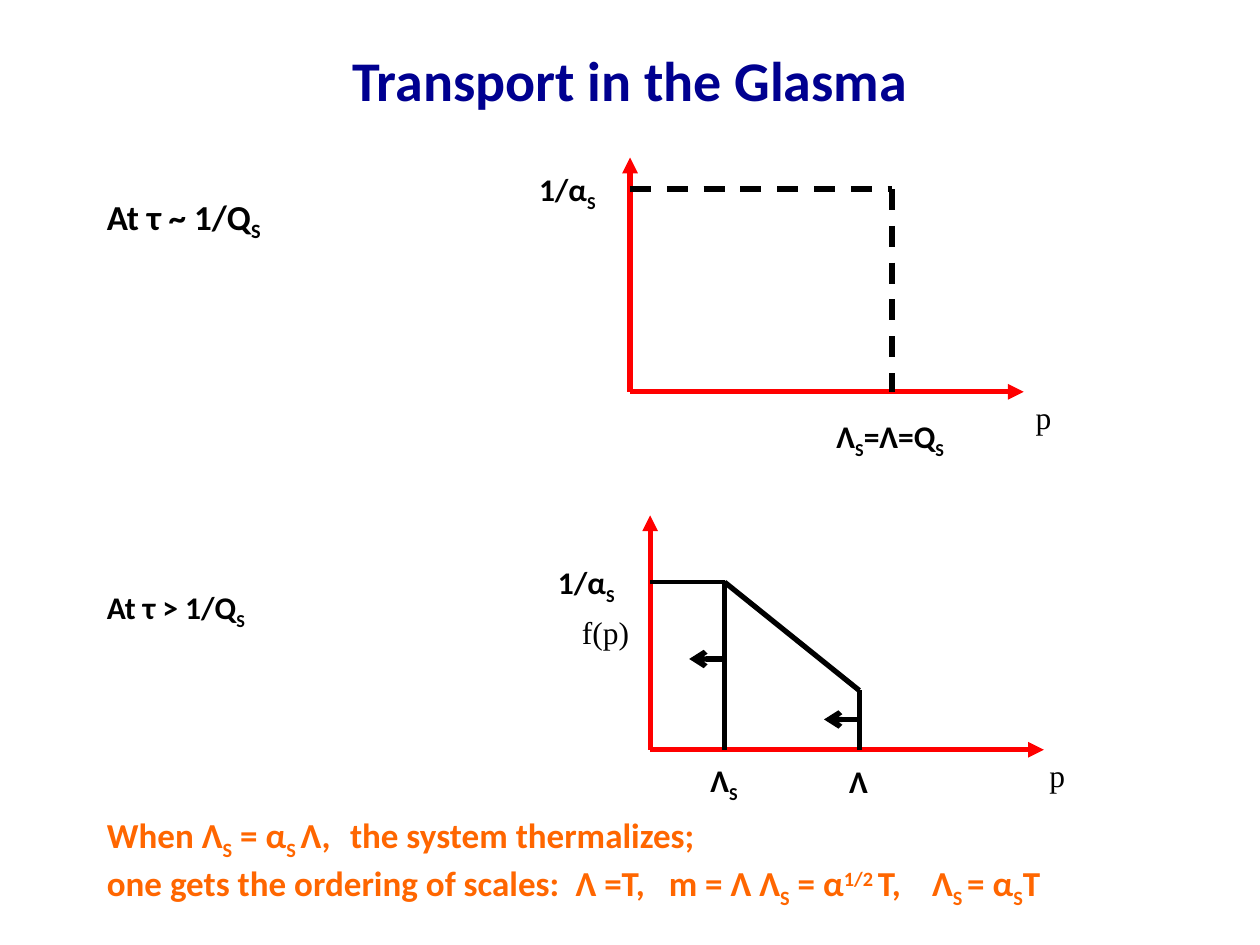
from lxml import etree
from pptx import Presentation
from pptx.dml import color
from pptx.enum import dml, shapes, text
from pptx.oxml import ns
from pptx.util import Emu, Inches, Pt

NAVY, BLACK, RED, ORANGE = "000090", "000000", "FF0000", "FF6600"
BASELINES = {"_": "-25000", "^": "30000"}


def rgb(code):
    """Return the colour of a hex string."""
    return color.RGBColor.from_string(code)


def child(parent, tag, **attributes):
    """Add a DrawingML element to its parent."""
    return etree.SubElement(parent, ns.qn(f"a:{tag}"), **attributes)


def write(paragraph, content, size=18, ink=BLACK, font="Calibri", bold=True):
    """Add runs split at bars; a part led by _ or ^ is lowered or raised."""
    for part in content.split("|"):
        run = paragraph.add_run()
        baseline = BASELINES.get(part[0])
        run.text = part[1:] if baseline else part
        run.font.size, run.font.bold, run.font.name = Pt(size), bold, font
        run.font.color.rgb = rgb(ink)
        if baseline:
            run.font._element.set("baseline", baseline)


class Board:
    """Style and current slide, measured on a grid of 100 columns by 75 rows."""

    def __init__(self, deck):
        """Add a blank slide and work out the grid cell."""
        self.slide = deck.slides.add_slide(deck.slide_layouts[6])
        self.column = deck.slide_width / 100
        self.row = deck.slide_height / 75

    def place(self, column, row):
        """Turn a grid position into lengths."""
        return Emu(round(column * self.column)), Emu(round(row * self.row))

    def label(self, at, extent, *lines, wrap=False, grow=True, align="LEFT",
              anchor="TOP", tabs=(), **style):
        """Add a text box with one paragraph per line."""
        box = self.slide.shapes.add_textbox(*self.place(*at), *self.place(*extent))
        frame = box.text_frame
        frame.word_wrap = wrap
        frame.auto_size = text.MSO_AUTO_SIZE[
            "SHAPE_TO_FIT_TEXT" if grow else "NONE"]
        frame.vertical_anchor = text.MSO_ANCHOR[anchor]
        for index, line in enumerate(lines):
            paragraph = frame.add_paragraph() if index else frame.paragraphs[0]
            paragraph.alignment = text.PP_ALIGN[align]
            if tabs:
                stops = child(paragraph._p.get_or_add_pPr(), "tabLst")
                for stop in tabs:
                    position = str(self.place(stop, 0)[0])
                    child(stops, "tab", pos=position, algn="l")
            write(paragraph, line, **style)

    def line(self, start, end, ink=BLACK, width=3, dashed=False, tip=None):
        """Draw a straight line, with an arrowhead at its end if a tip is given."""
        link = self.slide.shapes.add_connector(
            shapes.MSO_CONNECTOR.STRAIGHT, *self.place(*start), *self.place(*end))
        link.line.color.rgb, link.line.width = rgb(ink), Pt(width)
        if dashed:
            link.line.dash_style = dml.MSO_LINE.DASH
        if tip:
            child(link.line._get_or_add_ln(), "tailEnd", type=tip)
        child(link._element.spPr, "effectLst")

    def axes(self, x, y):
        """Draw the two red axes from their origin."""
        for end in ((x, y - 18.6), (x + 31.25, y)):
            self.line((x, y), end, ink=RED, tip="triangle")

    def momentum(self, at):
        """Name the horizontal axis."""
        self.label(at, (2.1, 7.1), "p", wrap=True,
                   font="Times New Roman", bold=False)


def early_times(board):
    """Show the distribution at the saturation time."""
    x, y, edge, top = 50, 31.1, 70.8, 15
    board.label((7.5, 15), (14.6, 4.4), "At τ ~ 1/Q|_S", size=20)
    board.axes(x, y)
    board.line((x, top), (edge, top), dashed=True)
    board.line((edge, top), (edge, y), dashed=True)
    board.label((41.8, 13), (6.7, 4), "1/α|_S")
    board.label((65.4, 32.6), (10.9, 4), "Λ|_S|=Λ=Q|_S")
    board.momentum((81.2, y))


def later_times(board):
    """Show the two scales moving apart."""
    x, y, soft, hard, top, knee = 51.6, 59.5, 57.5, 68.2, 46.2, 54.8
    board.label((7.5, 46.2), (13.6, 4), "At τ > 1/Q|_S")
    board.axes(x, y)
    board.line((x, top), (soft, top), width=2.25)
    board.line((soft, top), (hard, knee))
    for scale, height, drift in ((soft, top, 52.3), (hard, knee, 57.1)):
        board.line((scale, height), (scale, y))
        board.line((scale, drift), (scale - 2.8, drift), tip="arrow")
    board.label((43.3, 44.2), (6.7, 4), "1/α|_S")
    board.label((45.2, 48.2), (5.8, 4), "f(p)",
                font="Times New Roman", bold=False)
    board.label((55.4, 59.9), (4.3, 4), "Λ|_S")
    board.label((66.4, 60), (3.6, 4), "Λ")
    board.momentum((82.3, y))


def main():
    """Build the slide and save it."""
    deck = Presentation()
    deck.slide_width, deck.slide_height = Inches(10), Inches(7.5)
    board = Board(deck)
    board.label((7.5, 0), (85, 12.5), "Transport in the Glasma", wrap=True,
                grow=False, align="CENTER", anchor="MIDDLE", size=32, ink=NAVY)
    early_times(board)
    later_times(board)
    board.label((7.5, 64.1), (77.6, 7.7),
                "When Λ|_S| = α|_S |Λ,\tthe system thermalizes;",
                "one gets the ordering of scales:\tΛ =T,\tm = Λ Λ|_S| = α|^1/2 "
                "|T,\tΛ|_S |= α|_S|T",
                wrap=True, tabs=(19.3, 37.2, 44.6, 65.5), size=20, ink=ORANGE)
    deck.save("out.pptx")


if __name__ == "__main__":
    main()
